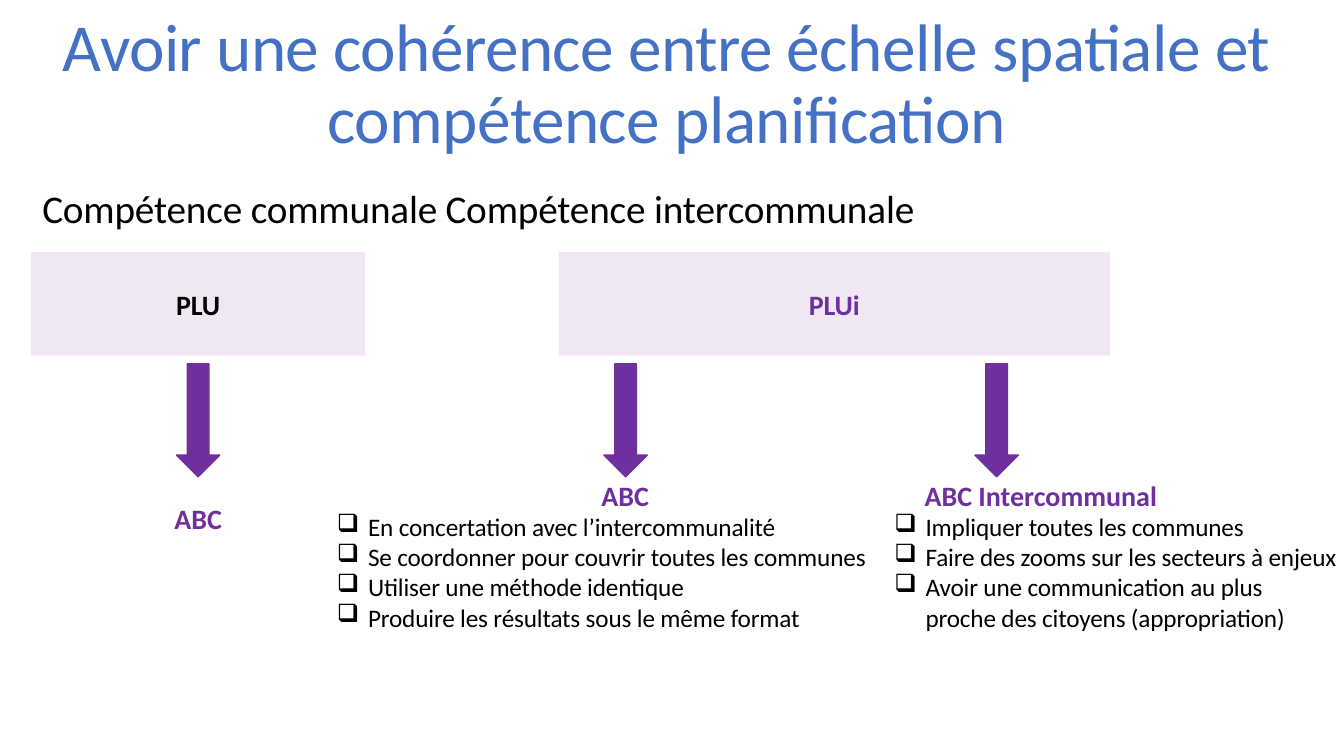
from lxml import etree
from pptx import Presentation
from pptx.dml.color import RGBColor
from pptx.enum import shapes, text
from pptx.oxml.ns import qn
from pptx.util import Inches, Pt

# Content
TITLE = "Avoir une cohérence entre échelle spatiale et\vcompétence planification"
HEADS = "Compétence communale\tCompétence intercommunale"
BLUE, VIOLET, BLACK = "4471C4", "6F2F9F", "000000"
PLANS = [("PLU", 0.31, 3.31, BLACK), ("PLUi", 5.54, 5.47, VIOLET)]  # left, width
ARROWS = [1.75, 5.99, 9.67]
LISTS = [  # head, left, top, width, height, indent, centred, items
    ("ABC", 1.72, 4.98, 0.5, 0.36, 0.01, False, []),
    ("ABC", 3.32, 4.76, 5.35, 1.53, 0.41, True, [
        "En concertation avec l’intercommunalité",
        "Se coordonner pour couvrir toutes les communes",
        "Utiliser une méthode identique",
        "Produire les résultats sous le même format"]),
    ("ABC Intercommunal", 8.85, 4.76, 4.48, 1.53, 0.32, False, [
        "Impliquer toutes les communes",
        "Faire des zooms sur les secteurs à enjeux",
        "Avoir une communication au plus\vproche des citoyens (appropriation)"]),
]


def color(code):
    return RGBColor.from_string(code)


def write(par, words, size, code, bold=False, space=-10):
    par.text = words
    par.space_before = Pt(0)
    font = par.font
    font.name, font.size, font.bold = "Calibri", Pt(size), bold
    font.color.rgb = color(code)
    for run in par.runs:
        run._r.get_or_add_rPr().set("spc", str(space))


def indent(par, left, first=0, mark=None, tab=None):
    props = par._p.get_or_add_pPr()
    props.set("marL", str(Inches(left)))
    props.set("indent", str(Inches(first)))
    if mark:
        etree.SubElement(props, qn("a:buChar")).set("char", mark)
    if tab:
        stops = etree.SubElement(props, qn("a:tabLst"))
        stop = etree.SubElement(stops, qn("a:tab"))
        stop.set("pos", str(Inches(tab)))
        stop.set("algn", "l")


def bare(frame, anchor=text.MSO_ANCHOR.TOP):
    frame.margin_left = frame.margin_right = 0
    frame.margin_top = frame.margin_bottom = 0
    frame.word_wrap = True
    frame.auto_size = text.MSO_AUTO_SIZE.NONE
    frame.vertical_anchor = anchor
    return frame


def box(*place):
    return bare(slide.shapes.add_textbox(*map(Inches, place)).text_frame)


def shape(kind, *place):
    item = slide.shapes.add_shape(kind, *map(Inches, place))
    item.shadow.inherit = False
    item.fill.solid()
    item.fill.fore_color.rgb = color(VIOLET)
    return item


deck = Presentation()
deck.slide_width, deck.slide_height = Inches(13.33), Inches(7.5)
slide = deck.slides.add_slide(deck.slide_layouts[5])

# Title
title = slide.shapes.title
title.left, title.top = Inches(0.27), Inches(0.12)
title.width, title.height = Inches(12.68), Inches(1.6)
par = bare(title.text_frame).paragraphs[0]
write(par, TITLE, 48, BLUE, space=-40)
par.alignment = text.PP_ALIGN.CENTER
par.line_spacing = Pt(51.8)

# Column heads
par = box(0.41, 1.83, 10.17, 0.47).paragraphs[0]
indent(par, 0.01, tab=5.46)
write(par, HEADS, 28, BLACK)

# Plan boxes
for name, left, width, code in PLANS:
    plan = shape(shapes.MSO_SHAPE.RECTANGLE, left, 2.5, width, 1.03)
    plan.line.fill.background()
    tint = plan.fill._xPr.find(qn("a:solidFill"))[0]
    etree.SubElement(tint, qn("a:alpha")).set("val", "11000")
    par = bare(plan.text_frame, text.MSO_ANCHOR.MIDDLE).paragraphs[0]
    write(par, name, 20, code, True)
    par.alignment = text.PP_ALIGN.CENTER

# Arrows
for left in ARROWS:
    arrow = shape(shapes.MSO_SHAPE.DOWN_ARROW, left, 3.61, 0.43, 1.12)
    arrow.line.color.rgb = color(VIOLET)
    arrow.line.width = Pt(0.96)

# Lists under the arrows
for head, left, top, width, height, inset, mid, items in LISTS:
    frame = box(left, top, width, height)
    par = frame.paragraphs[0]
    indent(par, inset)
    write(par, head, 20, VIOLET, True, 0)
    if mid:
        par.alignment = text.PP_ALIGN.CENTER
    if items:
        par.line_spacing = Pt(23.2)
    for item in items:
        par = frame.add_paragraph()
        indent(par, 0.33, -0.31, "❑")
        write(par, item, 18, BLACK)
        par.line_spacing = Pt(20.8 if item == items[0] else 21.6)

deck.save("out.pptx")
